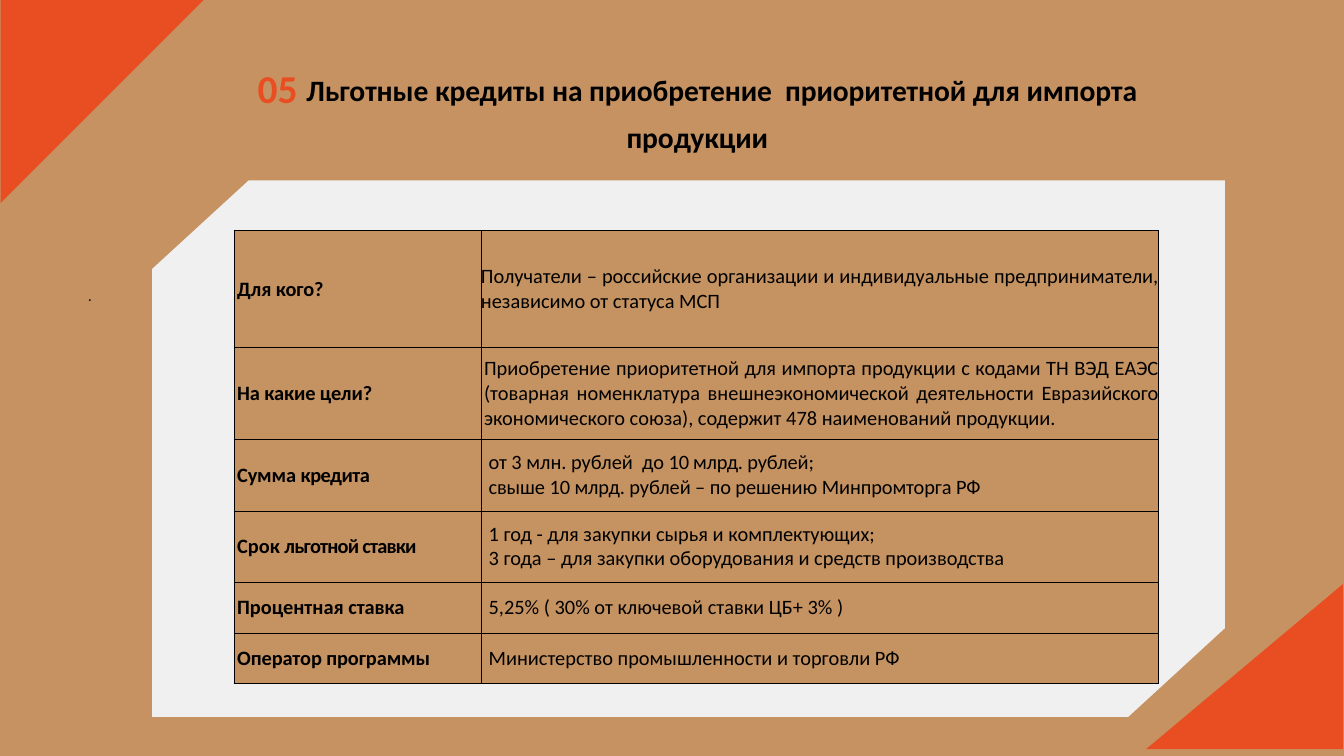
from dataclasses import dataclass

import lxml.etree
import pptx
import pptx.dml.color
import pptx.enum.text
import pptx.oxml.ns
import pptx.util

EMU_PER_PX = 9144
Align = pptx.enum.text.PP_ALIGN


@dataclass(frozen=True)
class Theme:
    font: str = "Calibri"
    sand: str = "C69262"
    cell: str = "C59261"
    orange: str = "E84E21"
    panel: str = "F0F0F0"
    black: str = "000000"
    ink: str = "1D1D1B"
    number_size: float = 80.2
    title_size: float = 60
    dot_size: float = 19.5
    table_size: float = 24


THEME = Theme()


@dataclass(frozen=True)
class Span:
    text: str
    spacing: float = 0
    bold: bool = False
    size: float = THEME.table_size
    color: str = THEME.black
    baseline: int = 0


@dataclass(frozen=True)
class Outline:
    color: str
    points: tuple[tuple[int, int], ...]


@dataclass(frozen=True)
class Row:
    height: int
    label: tuple[Span, ...]
    lines: tuple[tuple[Span, ...], ...]
    indent: int = 5


OUTLINES = (
    Outline(THEME.orange, ((333, 0), (1, 0), (1, 332))),
    Outline(THEME.orange, ((2197, 956), (1875, 1226), (2197, 1226))),
    Outline(THEME.panel, ((2004, 295), (407, 295), (249, 440),
                          (249, 1173), (1846, 1173), (2004, 1028))),
)

TITLE = (
    Span("05 ", -0.1, True, THEME.number_size, THEME.orange, -15),
    Span("Льготные кредиты на приобретение  приоритетной для импорта продукции",
         -0.1, True, THEME.title_size, THEME.black, -15),
)
DOT = (Span(".", -0.1, size=THEME.dot_size, color=THEME.ink),)

COLUMNS = (404, 1109)
ROWS = (
    Row(192, (Span("Для кого?", -0.1, True),),
        ((Span("Получатели – российские организации и индивидуальные "
               "предприниматели, независимо от статуса МСП"),),), indent=0),
    Row(150, (Span("На какие цели?", -0.1, True),),
        ((Span("Приобретение приоритетной для импорта продукции с кодами ТН ВЭД ЕАЭС "
               "(товарная номенклатура внешнеэкономической деятельности Евразийского "
               "экономического союза), содержит 478 наименований продукции."),),)),
    Row(117, (Span("Сумма ", -0.1, True), Span("кредита", -0.6, True)),
        ((Span(" от ", -0.1), Span("3 млн. рублей  до "),
          Span("10 млрд. ", -0.3), Span("рублей;", -0.1)),
         (Span(" свыше 10 млрд. рублей – по решению Минпромторга РФ", -0.1),))),
    Row(117, (Span("Срок ", 0, True), Span("льготной ставки", -0.9, True)),
        ((Span(" 1 год - для закупки сырья и комплектующих;"),),
         (Span(" 3 года – для закупки оборудования и средств производства"),))),
    Row(83, (Span("Процентная ", 0, True), Span("ставка", -0.1, True)),
        ((Span(" 5,25% ( 30% от ключевой ставки ЦБ+ 3% )"),),)),
    Row(83, (Span("Оператор программы", -0.1, True),),
        ((Span(" Министерство промышленности и торговли РФ"),),)),
)


def px(length: int) -> pptx.util.Emu:
    return pptx.util.Emu(length * EMU_PER_PX)


def rgb(color: str) -> pptx.dml.color.RGBColor:
    return pptx.dml.color.RGBColor.from_string(color)


def add_spans(para, spans: tuple[Span, ...]) -> None:
    for span in spans:
        run = para.add_run()
        run.text = span.text
        run.font.name = THEME.font
        run.font.size = pptx.util.Pt(span.size)
        run.font.bold = span.bold
        run.font.color.rgb = rgb(span.color)
        properties = run.font._element
        properties.set("spc", str(round(span.spacing * 100)))
        if span.baseline:
            properties.set("baseline", str(span.baseline * 1000))


def add_outline(page, outline: Outline) -> None:
    builder = page.shapes.build_freeform(*outline.points[0], scale=EMU_PER_PX)
    builder.add_line_segments(outline.points[1:], close=True)
    shape = builder.convert_to_shape()
    shape.shadow.inherit = False
    shape.fill.solid()
    shape.fill.fore_color.rgb = rgb(outline.color)
    shape.line.fill.background()


def add_text(page, area: tuple[int, int, int, int], spans: tuple[Span, ...],
             space_before: float):
    box = page.shapes.add_textbox(*map(px, area))
    frame = box.text_frame
    frame.word_wrap = True
    frame.auto_size = pptx.enum.text.MSO_AUTO_SIZE.SHAPE_TO_FIT_TEXT
    frame.margin_left = frame.margin_right = frame.margin_bottom = 0
    frame.margin_top = px(1)
    para = frame.paragraphs[0]
    para.space_before = pptx.util.Pt(space_before)
    add_spans(para, spans)
    return para


def set_borders(cell) -> None:
    properties = cell._tc.get_or_add_tcPr()
    qn = pptx.oxml.ns.qn
    for side in ("a:lnL", "a:lnR", "a:lnT", "a:lnB"):
        line = lxml.etree.SubElement(properties, qn(side), w=str(pptx.util.Pt(1)))
        fill = lxml.etree.SubElement(line, qn("a:solidFill"))
        lxml.etree.SubElement(fill, qn("a:srgbClr"), val=THEME.black)


def fill_cell(cell, lines: tuple[tuple[Span, ...], ...], indent: int) -> None:
    set_borders(cell)
    cell.fill.solid()
    cell.fill.fore_color.rgb = rgb(THEME.cell)
    cell.margin_left = cell.margin_right = cell.margin_top = cell.margin_bottom = 0
    cell.vertical_anchor = pptx.enum.text.MSO_ANCHOR.MIDDLE
    frame = cell.text_frame
    for index, spans in enumerate(lines):
        para = frame.add_paragraph() if index else frame.paragraphs[0]
        para.alignment = Align.JUSTIFY
        para._p.get_or_add_pPr().set("marL", str(px(indent)))
        add_spans(para, spans)


def add_terms(page, left: int, top: int) -> None:
    height = sum(row.height for row in ROWS)
    table = page.shapes.add_table(len(ROWS), len(COLUMNS), px(left), px(top),
                                  px(sum(COLUMNS)), px(height)).table
    table.first_row = table.horz_banding = False
    for column, width in zip(table.columns, COLUMNS):
        column.width = px(width)
    for index, row in enumerate(ROWS):
        table.rows[index].height = px(row.height)
        fill_cell(table.cell(index, 0), (row.label,), 5)
        fill_cell(table.cell(index, 1), row.lines, row.indent)


def main() -> None:
    deck = pptx.Presentation()
    deck.slide_width, deck.slide_height = px(2199), px(1237)
    page = deck.slides.add_slide(deck.slide_layouts[6])
    page.background.fill.solid()
    page.background.fill.fore_color.rgb = rgb(THEME.sand)
    for outline in OUTLINES:
        add_outline(page, outline)
    title = add_text(page, (333, 112, 1616, 146), TITLE, 1)
    title.alignment = Align.CENTER
    title.line_spacing = pptx.util.Pt(50)
    dot = add_text(page, (143, 466, 10, 35), DOT, 0.9)
    dot._p.get_or_add_pPr().set("marL", str(px(1)))
    add_terms(page, 383, 377)
    deck.save("out.pptx")


if __name__ == "__main__":
    main()
